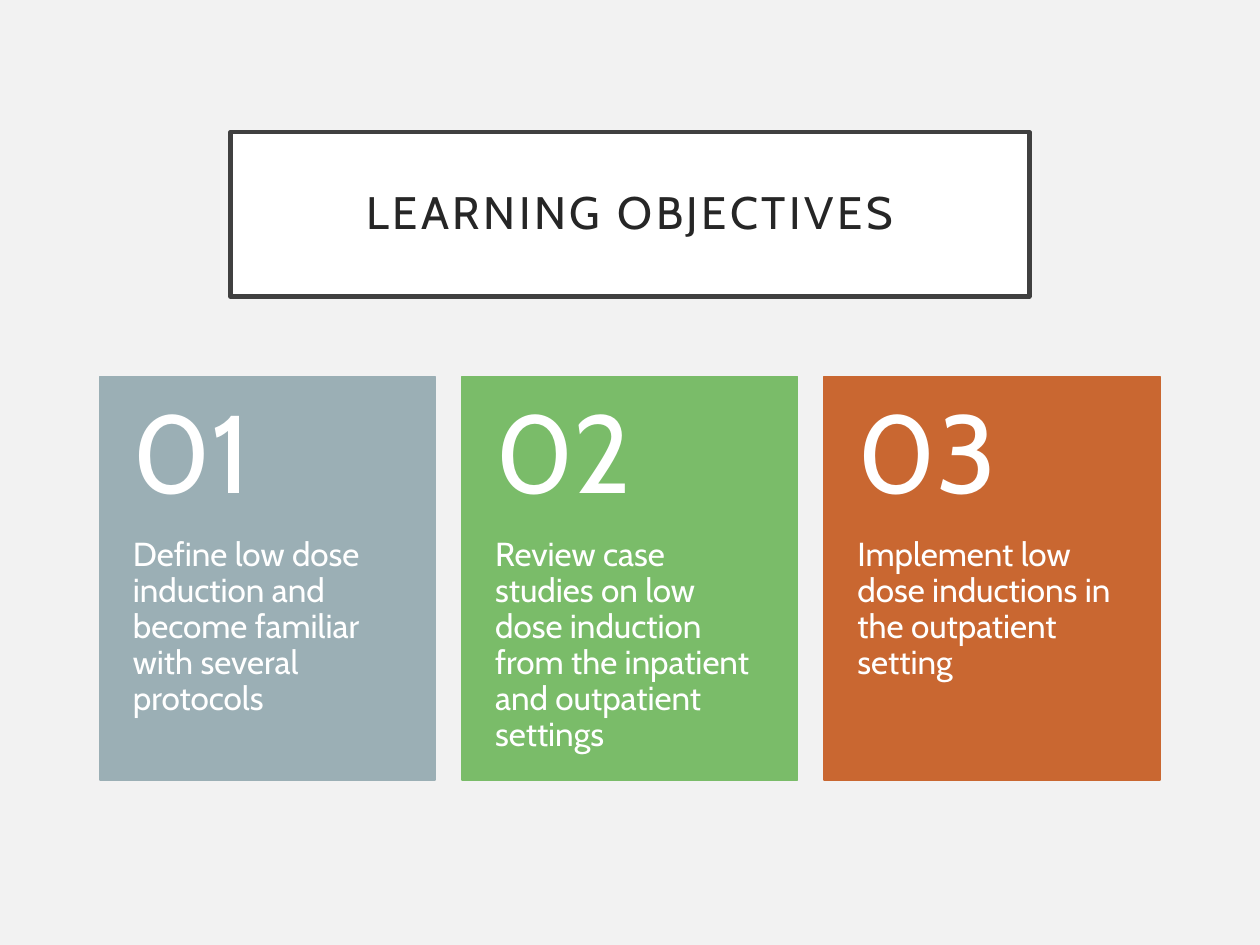
"""Build the learning objectives slide with a framed title and three numbered cards."""
import pptx
import pptx.dml.color
import pptx.enum.shapes
import pptx.enum.text
import pptx.util

Pt = pptx.util.Pt
RGBColor = pptx.dml.color.RGBColor
ANCHOR = pptx.enum.text.MSO_ANCHOR
ALIGN = pptx.enum.text.PP_ALIGN
RECT = pptx.enum.shapes.MSO_SHAPE.RECTANGLE

PAPER = RGBColor(0xF2, 0xF2, 0xF2)
WHITE = RGBColor(0xFF, 0xFF, 0xFF)
FRAME = RGBColor(0x40, 0x40, 0x40)
INK = RGBColor(0x26, 0x26, 0x26)
SLATE = RGBColor(0x9B, 0xAF, 0xB5)
GREEN = RGBColor(0x7A, 0xBC, 0x69)
RUST = RGBColor(0xC9, 0x67, 0x31)

deck = pptx.Presentation()
deck.slide_width, deck.slide_height = Pt(720), Pt(540)
slide = deck.slides.add_slide(deck.slide_layouts[6])
slide.background.fill.solid()
slide.background.fill.fore_color.rgb = PAPER


def add_box(left, top, width, height, fill, line, weight):
    box = slide.shapes.add_shape(RECT, Pt(left), Pt(top), Pt(width), Pt(height))
    box.shadow.inherit = False
    box.fill.solid()
    box.fill.fore_color.rgb = fill
    box.line.color.rgb = line
    box.line.width = Pt(weight)
    return box


def put_text(shape, text, size, color, anchor, align, pads):
    frame = shape.text_frame
    left, top, right, bottom = map(Pt, pads)
    look = {
        "word_wrap": True, "vertical_anchor": anchor,
        "margin_left": left, "margin_top": top,
        "margin_right": right, "margin_bottom": bottom,
    }
    for name, value in look.items():
        setattr(frame, name, value)
    para = frame.paragraphs[0]
    para.alignment, para.line_spacing = align, 0.9
    run = para.add_run()
    run.text = text
    for name, value in {"name": "Cabin", "size": Pt(size)}.items():
        setattr(run.font, name, value)
    run.font.color.rgb = color
    return run


title = add_box(131.75, 75.5, 456.5, 94, WHITE, FRAME, 2.5)
run = put_text(title, "LEARNING OBJECTIVES", 26, INK, ANCHOR.MIDDLE, ALIGN.CENTER, [14.4] * 4)
run.font._element.set("spc", "200")

goals = [
    (SLATE, "Define low dose induction and become familiar with several protocols"),
    (GREEN, "Review case studies on low dose induction from the inpatient and outpatient settings"),
    (RUST, "Implement low dose inductions in the outpatient setting"),
]
top, width, head, body = 215.2, 191.8, 92.2, 138.3
for index, (color, goal) in enumerate(goals):
    left = 57 + index * 207
    add_box(left, top, width, head + body, color, color, 1)
    parts = [
        (top + head, body, goal, 19, ANCHOR.TOP, (19, 0, 19, 26)),
        (top, head, f"{index + 1:02}", 63, ANCHOR.MIDDLE, (19, 13, 19, 13)),
    ]
    for y, height, text, size, anchor, pads in parts:
        box = slide.shapes.add_textbox(Pt(left), Pt(y), Pt(width), Pt(height))
        put_text(box, text, size, WHITE, anchor, ALIGN.LEFT, pads)

deck.save("out.pptx")
